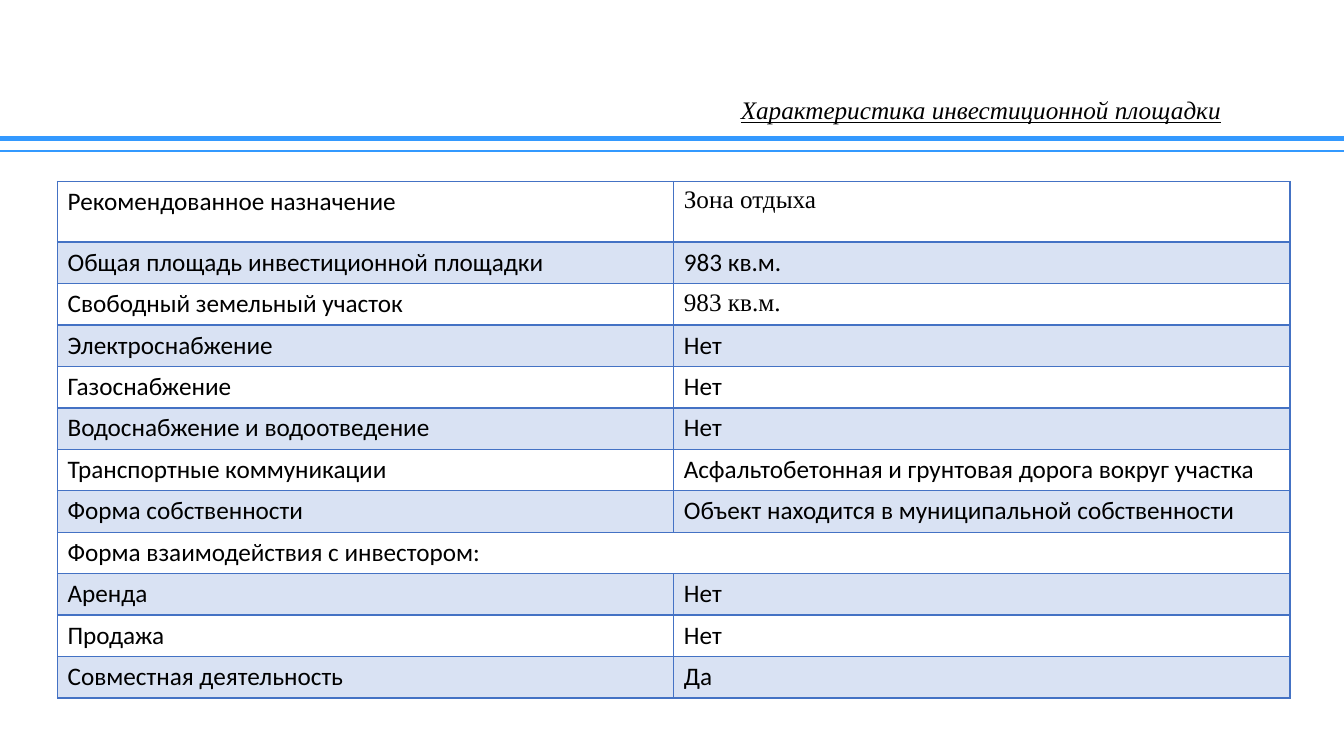
from lxml import etree
from pptx import Presentation
from pptx.dml.color import RGBColor
from pptx.enum.shapes import MSO_CONNECTOR
from pptx.enum.text import MSO_ANCHOR, PP_ALIGN
from pptx.oxml.ns import qn
from pptx.util import Pt

STRAIGHT = MSO_CONNECTOR.STRAIGHT
MIDDLE, CENTER = MSO_ANCHOR.MIDDLE, PP_ALIGN.CENTER

# Content
TITLE = "Характеристика инвестиционной площадки"
ROWS = [
    ("Рекомендованное назначение", "Зона отдыха"),
    ("Общая площадь инвестиционной площадки", "983 кв.м."),
    ("Свободный земельный участок", "983 кв.м."),
    ("Электроснабжение", "Нет"),
    ("Газоснабжение", "Нет"),
    ("Водоснабжение и водоотведение", "Нет"),
    ("Транспортные коммуникации", "Асфальтобетонная и грунтовая дорога вокруг участка"),
    ("Форма собственности", "Объект находится в муниципальной собственности"),
    ("Форма взаимодействия с инвестором:",),
    ("Аренда", "Нет"),
    ("Продажа", "Нет"),
    ("Совместная деятельность", "Да"),
]
SERIF_CELLS = {(0, 1), (2, 1)}

# Look
COLORS = {"rule": "3399FF", "grid": "4472C4", "text": "000000"}
SANS, SERIF = "Calibri", "Times New Roman"
BAND_OPACITY = 20
WIDTH, HEIGHT = 960, 540
RULES = [(99.2, 3.5), (108, 1.5)]  # top, line width
TITLE_BOX = (480, 69.8, 441.4, 19.4)
TABLE_LEFT, TABLE_TOP, COLUMN_WIDTH = 41.1, 129.6, 440.2
FIRST_HEIGHT, ROW_HEIGHT = 43.4, 29.6


def write(para, text, **formats):
    span = para.add_run()
    span.text = text
    span.font.color.rgb = RGBColor.from_string(COLORS["text"])
    for name, value in {"size": Pt(18), **formats}.items():
        setattr(span.font, name, value)


def add_border(cell, side, width):
    props = cell._tc.get_or_add_tcPr()
    line = etree.SubElement(props, qn(f"a:ln{side}"), w=str(Pt(width)))
    fill = etree.SubElement(line, qn("a:solidFill"))
    etree.SubElement(fill, qn("a:srgbClr"), val=COLORS["grid"])


def fill_band(cell):
    cell.fill.solid()
    cell.fill.fore_color.rgb = RGBColor.from_string(COLORS["grid"])
    color = cell._tc.tcPr.find(".//" + qn("a:solidFill") + "[last()]")
    color = cell._tc.tcPr.find(qn("a:solidFill")).find(qn("a:srgbClr"))
    etree.SubElement(color, qn("a:alpha"), val=str(BAND_OPACITY * 1000))


deck = Presentation()
deck.slide_width, deck.slide_height = Pt(WIDTH), Pt(HEIGHT)
page = deck.slides.add_slide(deck.slide_layouts[6])

# Double rule under the title
for top, width in RULES:
    rule = page.shapes.add_connector(STRAIGHT, 0, Pt(top), Pt(WIDTH), Pt(top))
    rule.line.color.rgb = RGBColor.from_string(COLORS["rule"])
    rule.line.width = Pt(width)
    etree.SubElement(rule._element.spPr, qn("a:effectLst"))

# Title
box = page.shapes.add_textbox(*map(Pt, TITLE_BOX))
frame = box.text_frame
frame.word_wrap = True
frame.vertical_anchor = MIDDLE
para = frame.paragraphs[0]
para.alignment, para.line_spacing = CENTER, 0.9
write(para, TITLE, name=SERIF, italic=True, underline=True)

# Site table
table = page.shapes.add_table(
    len(ROWS), 2, Pt(TABLE_LEFT), Pt(TABLE_TOP), Pt(2 * COLUMN_WIDTH),
    Pt(FIRST_HEIGHT + ROW_HEIGHT * (len(ROWS) - 1))).table
table.first_row = table.horz_banding = False
for column in table.columns:
    column.width = Pt(COLUMN_WIDTH)

for r, texts in enumerate(ROWS):
    table.rows[r].height = Pt(ROW_HEIGHT if r else FIRST_HEIGHT)
    if len(texts) == 1:
        table.cell(r, 0).merge(table.cell(r, 1))
    for c in range(2):
        cell = table.cell(r, c)
        widths = {"L": 1, "R": 1, "T": 2 if r == 1 else 1, "B": 1 if r else 2}
        for side, width in widths.items():
            add_border(cell, side, width)
        if r % 2:
            fill_band(cell)
        else:
            cell.fill.background()
        if c < len(texts):
            font = SERIF if (r, c) in SERIF_CELLS else SANS
            write(cell.text_frame.paragraphs[0], texts[c], name=font)

deck.save("out.pptx")
